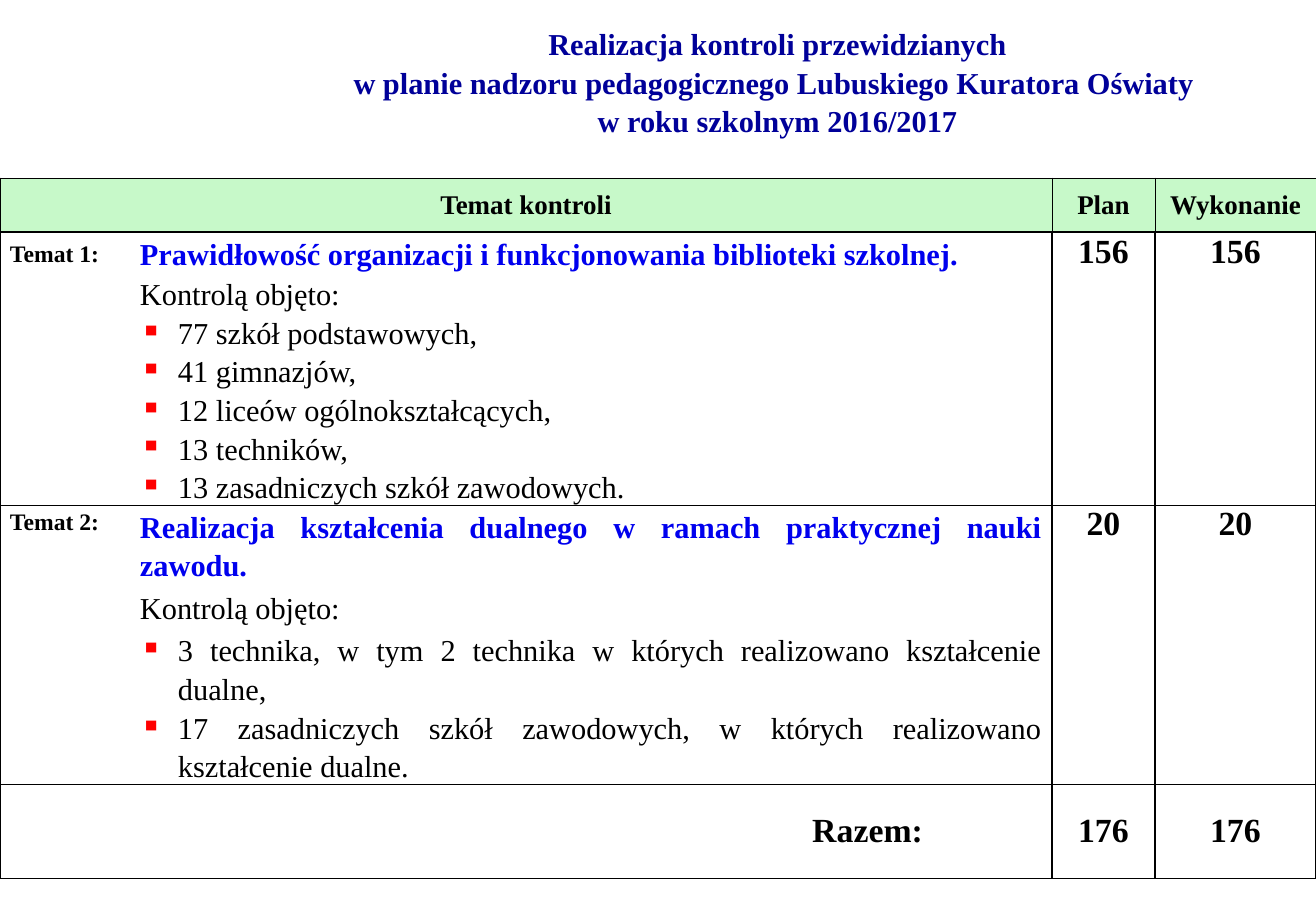
"""Build the slide on school inspections planned and carried out in 2016/2017."""
from pptx import Presentation
from pptx import util as u
from pptx.dml.color import RGBColor
from pptx.enum import text
from pptx.oxml import parse_xml
from pptx.oxml.ns import nsdecls

PX = 914400 / 121.5
THEME = {
    "face": "Times New Roman",
    "navy": "000099", "blue": "0000EE", "black": "000000", "red": "FF0000",
    "green": "C7F9C9", "white": "FFFFFF",
    "head": 16, "label": 14, "body": 18, "count": 20,
}
MIDDLE, TOP = text.MSO_ANCHOR.MIDDLE, text.MSO_ANCHOR.TOP
LEFT, CENTER = text.PP_ALIGN.LEFT, text.PP_ALIGN.CENTER
RIGHT, JUSTIFY = text.PP_ALIGN.RIGHT, text.PP_ALIGN.JUSTIFY


def px(length):
    return u.Emu(round(length * PX))


def write(paragraph, words, size, colour, bold, align, spacing):
    paragraph.text = words
    for name, value in {"alignment": align, "line_spacing": spacing}.items():
        setattr(paragraph, name, value)
    look = {"name": THEME["face"], "size": u.Pt(THEME[size]), "bold": bold}
    for run in paragraph.runs:
        for name, value in look.items():
            setattr(run.font, name, value)
        run.font.color.rgb = RGBColor.from_string(THEME[colour])


STYLES = {
    "head": (("head", "black", True, CENTER, 1.0), 1, 1),
    "label": (("label", "black", True, LEFT, 1.15), 10, 10),
    "topic": (("body", "blue", True, JUSTIFY, 1.15), 10, 10),
    "scope": (("body", "black", False, JUSTIFY, 1.15), 10, 10),
    "bullets": (("body", "black", False, JUSTIFY, 1.15), 10, 10),
    "count": (("count", "black", True, CENTER, 1.0), 1, 1),
    "total": (("count", "black", True, RIGHT, 1.0), 1, 129),
}
COLUMNS = [130, 922, 103, 161]
ROWS = [
    (54, {0: ("head", "Temat kontroli"), 2: ("head", "Plan"), 3: ("head", "Wykonanie")}),
    (41, {0: ("label", "Temat 1:"),
          1: ("topic", "Prawidłowość organizacji i funkcjonowania biblioteki szkolnej."),
          2: ("count", "156"), 3: ("count", "156")}),
    (38, {1: ("scope", "Kontrolą objęto:")}),
    (194, {1: ("bullets", "77 szkół podstawowych,", "41 gimnazjów,",
               "12 liceów ogólnokształcących,", "13 techników,",
               "13 zasadniczych szkół zawodowych.")}),
    (78, {0: ("label", "Temat 2:"),
          1: ("topic", "Realizacja kształcenia dualnego w ramach praktycznej nauki zawodu."),
          2: ("count", "20"), 3: ("count", "20")}),
    (46, {1: ("scope", "Kontrolą objęto:")}),
    (155, {1: ("bullets",
               "3 technika, w tym 2 technika w których realizowano kształcenie dualne,",
               "17 zasadniczych szkół zawodowych, w których realizowano kształcenie dualne.")}),
    (94, {0: ("total", "Razem:"), 2: ("count", "176"), 3: ("count", "176")}),
]
HEADER, TOPIC_2, TOTAL = 0, 4, 7
RULED_BELOW = {-1, 0, 3, 6, 7}

deck = Presentation()
deck.slide_width, deck.slide_height = px(1316), px(911)
slide = deck.slides.add_slide(deck.slide_layouts[5])

title = slide.shapes.title
for name, value in {"left": 258, "top": 19, "width": 1039, "height": 124}.items():
    setattr(title, name, px(value))
title.text_frame.auto_size = text.MSO_AUTO_SIZE.NONE
title.text_frame.vertical_anchor = MIDDLE
write(title.text_frame.paragraphs[0],
      "Realizacja kontroli przewidzianych\v"
      "w planie nadzoru pedagogicznego Lubuskiego Kuratora Oświaty \v"
      "w roku szkolnym 2016/2017",
      "body", "navy", True, CENTER, 1.05)

heights = [height for height, _ in ROWS]
inspections = slide.shapes.add_table(
    len(ROWS), len(COLUMNS), 0, px(178), px(sum(COLUMNS)), px(sum(heights))).table
inspections.first_row = inspections.horz_banding = False
for column, width in zip(inspections.columns, COLUMNS):
    column.width = px(width)
for row in (HEADER, TOTAL):
    inspections.cell(row, 0).merge(inspections.cell(row, 1))

for row, (height, entries) in enumerate(ROWS):
    inspections.rows[row].height = px(height)
    for col in range(len(COLUMNS)):
        cell = inspections.cell(row, col)
        sides = {"L": col != 1, "R": col != 0 or cell.is_merge_origin,
                 "T": row - 1 in RULED_BELOW, "B": row in RULED_BELOW}
        weight = u.Pt(0.5 if row == HEADER else 1)
        for side, ruled in sides.items():
            paint = (f'<a:solidFill><a:srgbClr val="{THEME["black"]}"/></a:solidFill>'
                     if ruled else "<a:noFill/>")
            cell._tc.get_or_add_tcPr().append(parse_xml(
                f'<a:ln{side} {nsdecls("a")} w="{weight}">{paint}</a:ln{side}>'))
        cell.fill.solid()
        cell.fill.fore_color.rgb = RGBColor.from_string(
            THEME["green" if row == HEADER else "white"])

        kind, *lines = entries.get(col, ("count",))
        look, left, right = STYLES[kind]
        layout = {"margin_left": px(left), "margin_right": px(right),
                  "margin_top": 0, "margin_bottom": 0,
                  "vertical_anchor": TOP if row == TOPIC_2 and col != 1 else MIDDLE}
        for name, value in layout.items():
            setattr(cell, name, value)
        for number, line in enumerate(lines):
            frame = cell.text_frame
            paragraph = frame.add_paragraph() if number else frame.paragraphs[0]
            write(paragraph, line, *look)
            if kind == "bullets":
                properties = paragraph._p.get_or_add_pPr()
                properties.set("marL", str(px(38)))
                properties.set("indent", str(px(-38)))
                for mark in (f'<a:buClr {nsdecls("a")}><a:srgbClr val="{THEME["red"]}"/></a:buClr>',
                             f'<a:buChar {nsdecls("a")} char="▪"/>'):
                    properties.append(parse_xml(mark))

deck.save("out.pptx")
